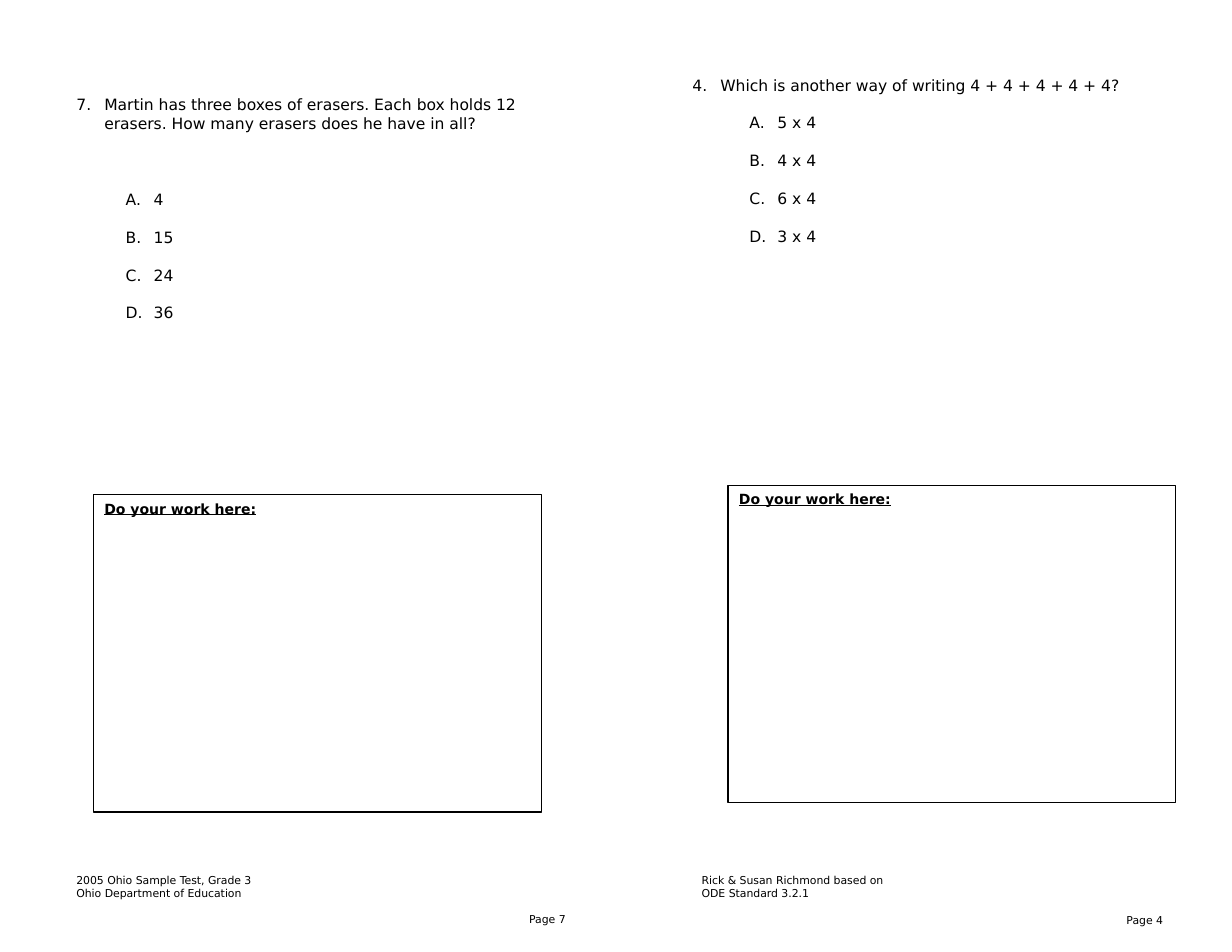
from dataclasses import dataclass

from lxml.etree import SubElement
from pptx import Presentation
from pptx.dml.color import RGBColor
from pptx.enum.shapes import MSO_SHAPE as Shape
from pptx.enum.text import MSO_ANCHOR as Anchor, MSO_AUTO_SIZE as AutoSize, PP_ALIGN as Align
from pptx.oxml.ns import qn
from pptx.slide import Slide
from pptx.util import Inches, Pt

BLACK = RGBColor(0, 0, 0)
WIDTH, HEIGHT = Inches(11), Inches(8.5)
COLUMNS, ROWS = 132, 102
HANGING = Inches(0.25)
CHOICE_GAP = 12.3


@dataclass
class Worksheet:
    slide: Slide
    font: str = "DejaVu Sans"
    color: RGBColor = BLACK

    def area(self, column, row, columns, rows):
        return [
            round(WIDTH * column / COLUMNS),
            round(HEIGHT * row / ROWS),
            round(WIDTH * columns / COLUMNS),
            round(HEIGHT * rows / ROWS),
        ]

    def add_text(self, paragraph, text, size, **formats):
        run = paragraph.add_run()
        run.text = text
        run.font.color.rgb = self.color
        for name, value in {"name": self.font, "size": Pt(size), **formats}.items():
            setattr(run.font, name, value)

    def frame(self, shape):
        frame = shape.text_frame
        formats = {"word_wrap": True, "auto_size": AutoSize.NONE, "vertical_anchor": Anchor.TOP}
        for name, value in formats.items():
            setattr(frame, name, value)
        return frame

    def text(self, area, lines, size=7, align=Align.LEFT):
        frame = self.frame(self.slide.shapes.add_textbox(*self.area(*area)))
        for index, line in enumerate(lines):
            paragraph = frame.add_paragraph() if index else frame.paragraphs[0]
            paragraph.alignment = align
            self.add_text(paragraph, line, size)

    def number(self, paragraph, scheme, start, margin):
        properties = paragraph._p.get_or_add_pPr()
        properties.set("marL", str(margin))
        properties.set("indent", str(-HANGING))
        SubElement(properties, qn("a:buFont"), typeface=self.font)
        SubElement(properties, qn("a:buAutoNum"), type=scheme, startAt=str(start))

    def question(self, area, number, wording, choices, margin, first_gap):
        frame = self.frame(self.slide.shapes.add_textbox(*self.area(*area)))
        paragraph = frame.paragraphs[0]
        self.number(paragraph, "arabicPeriod", number, HANGING)
        self.add_text(paragraph, wording, 10)
        for index, choice in enumerate(choices):
            paragraph = frame.add_paragraph()
            paragraph.space_before = Pt(CHOICE_GAP if index else first_gap)
            self.number(paragraph, "alphaUcPeriod", index + 1, Inches(margin))
            self.add_text(paragraph, choice, 10)

    def work_box(self, column, row):
        shape = self.slide.shapes.add_shape(Shape.RECTANGLE, *self.area(column, row, 48, 34))
        shape.shadow.inherit = False
        shape.fill.background()
        shape.line.color.rgb = self.color
        shape.line.width = Pt(0.75)
        paragraph = self.frame(shape).paragraphs[0]
        paragraph.alignment = Align.LEFT
        self.add_text(paragraph, "Do your work here:", 9, bold=True, underline=True)


def main():
    presentation = Presentation()
    presentation.slide_width, presentation.slide_height = WIDTH, HEIGHT
    sheet = Worksheet(presentation.slides.add_slide(presentation.slide_layouts[6]))

    for column, row, page in [(116, 97.3, 4), (52, 97.2, 7)]:
        sheet.text((column, row, 9.8, 3.2), [f"Page {page}"], align=Align.RIGHT)

    for column, row in [(78, 52), (10, 53)]:
        sheet.work_box(column, row)

    sheet.question(
        (7, 9.6, 56, 25.4),
        7,
        "Martin has three boxes of erasers. Each box holds 12 erasers. "
        "How many erasers does he have in all?",
        ["4", "15", "24", "36"],
        margin=0.69,
        first_gap=3 * CHOICE_GAP,
    )
    sheet.question(
        (73, 7.5, 52, 19.5),
        4,
        "Which is another way of writing 4 + 4 + 4 + 4 + 4?",
        [f"{factor} x 4" for factor in (5, 4, 6, 3)],
        margin=0.76,
        first_gap=CHOICE_GAP,
    )

    credits = {
        7: ["2005 Ohio Sample Test, Grade 3", "Ohio Department of Education"],
        74: ["Rick & Susan Richmond based on ODE Standard 3.2.1"],
    }
    for column, lines in credits.items():
        sheet.text((column, 93, 23, 4.1), lines)

    presentation.save("out.pptx")


if __name__ == "__main__":
    main()
